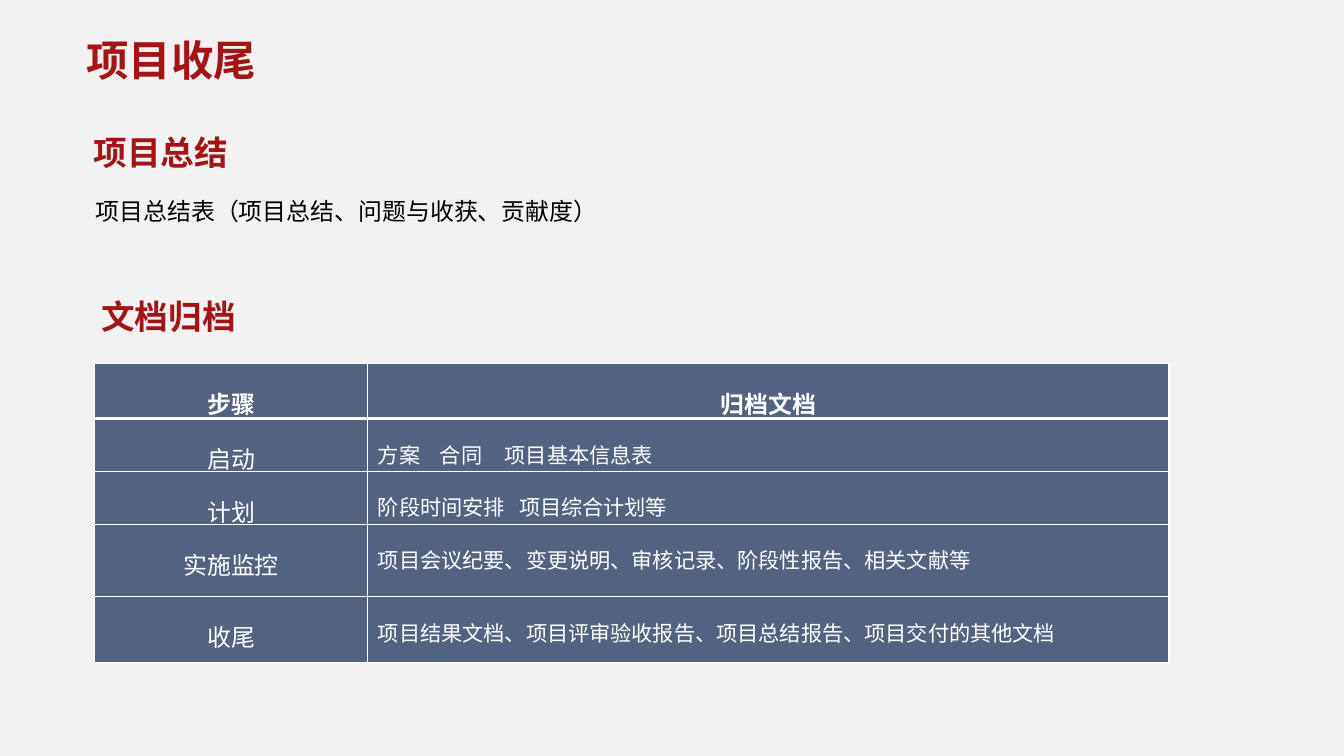
from dataclasses import dataclass

from lxml import etree
from pptx import Presentation
from pptx import util as u
from pptx.dml.color import RGBColor
from pptx.enum import text
from pptx.oxml import ns

RED = RGBColor(0xA3, 0x15, 0x15)
BLACK = RGBColor(0, 0, 0)
WHITE = RGBColor(0xFF, 0xFF, 0xFF)
SLATE = RGBColor(0x52, 0x62, 0x7F)
PALE = RGBColor(0xF2, 0xF2, 0xF2)
FONT = "Noto Sans CJK SC"


@dataclass
class Label:
    words: str
    left: float
    top: float
    width: float
    height: float
    size: float
    color: RGBColor = RED
    bold: bool = True
    wrap: bool = False
    lines: float = 1.5
    before: float = 0


@dataclass
class Step:
    name: str
    files: str
    height: float
    tabs: tuple = ()


TITLE = Label("项目收尾", 2.29, 0.89, 11.99, 1.37, 32, wrap=True, lines=1)
LABELS = [
    Label("项目总结表（项目总结、问题与收获、贡献度）", 2.29, 4.72, 20.29, 3.15, 18,
          BLACK, bold=False, wrap=True, before=3.6),
    Label("项目总结", 2.24, 2.84, 4.11, 1.68, 25.3),
    Label("文档归档", 2.44, 7.21, 4.11, 1.68, 25.3),
]
STEPS = [
    Step("步骤", "归档文档", 1.47),
    Step("启动", "方案\t合同\t项目基本信息表", 1.12, (1.65, 3.37)),
    Step("计划", "阶段时间安排\t项目综合计划等", 1.12, (3.75,)),
    Step("实施监控", "项目会议纪要、变更说明、审核记录、阶段性报告、相关文献等", 1.93),
    Step("收尾", "项目结果文档、项目评审验收报告、项目总结报告、项目交付的其他文档", 1.75),
]
WIDTHS = (7.26, 21.29)


def style(para, size: float, color: RGBColor, bold: bool, lines: float) -> None:
    para.line_spacing = lines
    for run in para.runs:
        font = run.font
        font.name = FONT
        font.size = u.Pt(size)
        font.bold = bold
        font.color.rgb = color
        east = etree.SubElement(run._r.get_or_add_rPr(), ns.qn("a:ea"))
        east.set("typeface", FONT)


def draw_label(slide, label: Label):
    box = slide.shapes.add_textbox(u.Cm(label.left), u.Cm(label.top),
                                   u.Cm(label.width), u.Cm(label.height))
    frame = box.text_frame
    frame.word_wrap = label.wrap
    frame.text = label.words
    para = frame.paragraphs[0]
    style(para, label.size, label.color, label.bold, label.lines)
    if label.before:
        para.space_before = u.Pt(label.before)
    return frame


def draw_title(slide, label: Label) -> None:
    frame = draw_label(slide, label)
    frame.margin_left = frame.margin_right = 0
    frame.margin_top = frame.margin_bottom = 0
    frame.vertical_anchor = text.MSO_ANCHOR.MIDDLE


def add_edges(cell, top: float, bottom: float) -> None:
    props = cell._tc.get_or_add_tcPr()
    edges = {"lnL": 1, "lnR": 1, "lnT": top, "lnB": bottom}
    for place, (tag, width) in enumerate(edges.items()):
        line = etree.Element(ns.qn(f"a:{tag}"), w=str(u.Pt(width)))
        fill = etree.SubElement(line, ns.qn("a:solidFill"))
        etree.SubElement(fill, ns.qn("a:srgbClr"), val=str(WHITE))
        props.insert(place, line)


def add_tabs(para, stops: tuple) -> None:
    tabs = etree.SubElement(para._p.get_or_add_pPr(), ns.qn("a:tabLst"))
    for stop in stops:
        etree.SubElement(tabs, ns.qn("a:tab"), pos=str(u.Cm(stop)), algn="l")


def draw_table(slide, steps: list[Step]) -> None:
    total = sum(step.height for step in steps)
    frame = slide.shapes.add_table(len(steps), len(WIDTHS), u.Cm(2.51), u.Cm(9.65),
                                   u.Cm(sum(WIDTHS)), u.Cm(total))
    table = frame.table
    table.horz_banding = False
    for col, width in zip(table.columns, WIDTHS):
        col.width = u.Cm(width)
    for row, step in enumerate(steps):
        table.rows[row].height = u.Cm(step.height)
        head = row == 0
        for col, words in enumerate((step.name, step.files)):
            cell = table.cell(row, col)
            cell.margin_left = cell.margin_right = u.Cm(0.27)
            cell.margin_top = cell.margin_bottom = u.Cm(0.13)
            cell.fill.solid()
            cell.fill.fore_color.rgb = SLATE
            add_edges(cell, 3 if row == 1 else 1, 3 if head else 1)
            cell.text_frame.text = words
            para = cell.text_frame.paragraphs[0]
            mid = head or col == 0
            style(para, 18 if mid else 16, WHITE, head, 1.5)
            para.alignment = text.PP_ALIGN.CENTER if mid else text.PP_ALIGN.LEFT
            if step.tabs and not mid:
                add_tabs(para, step.tabs)


def main() -> None:
    deck = Presentation()
    deck.slide_width, deck.slide_height = u.Cm(35.71), u.Cm(20.09)
    slide = deck.slides.add_slide(deck.slide_layouts[6])
    slide.background.fill.solid()
    slide.background.fill.fore_color.rgb = PALE
    for label in LABELS:
        draw_label(slide, label)
    draw_table(slide, STEPS)
    draw_title(slide, TITLE)
    deck.save("out.pptx")


if __name__ == "__main__":
    main()
